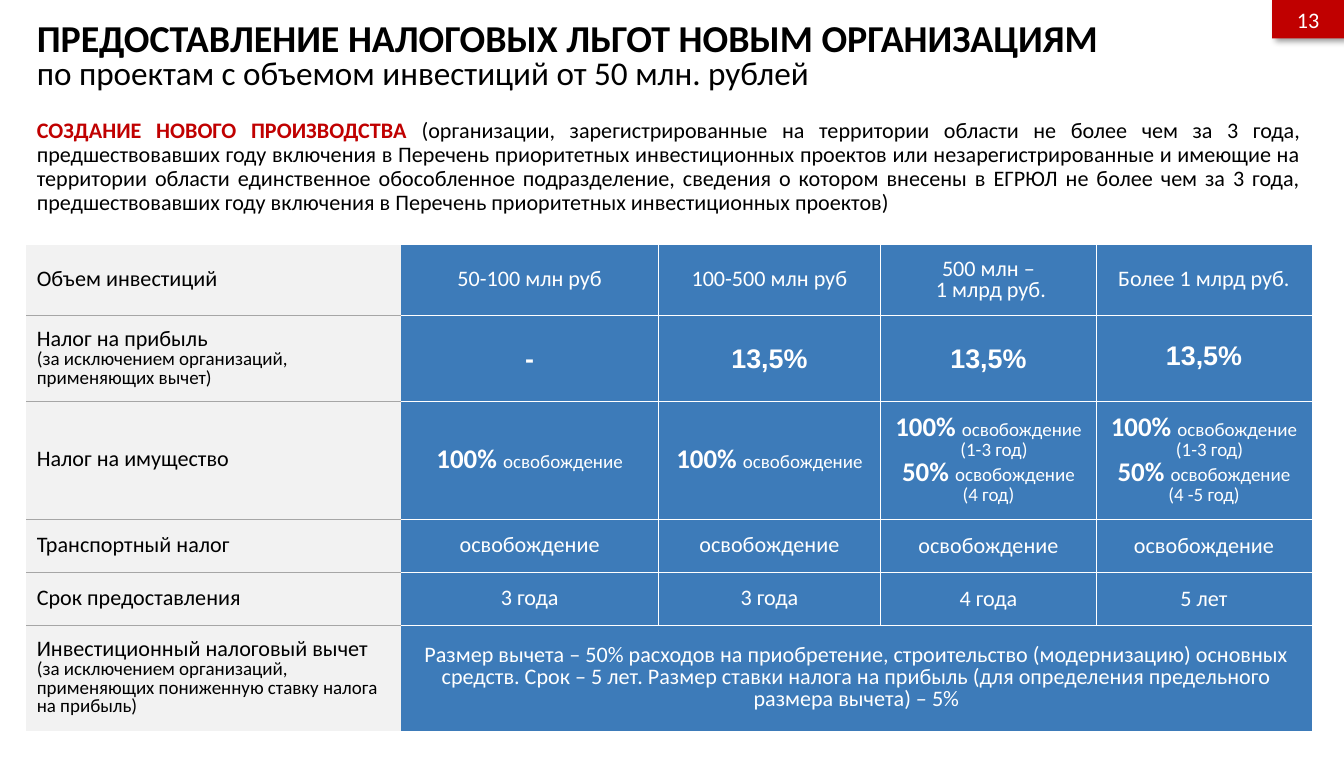
from lxml import etree
from pptx import Presentation
from pptx.dml.color import RGBColor
from pptx.enum.shapes import MSO_SHAPE
from pptx.enum.text import MSO_ANCHOR, PP_ALIGN
from pptx.oxml import parse_xml
from pptx.oxml.ns import nsdecls, qn
from pptx.util import Pt

LEFT, CENTER, JUSTIFY = PP_ALIGN.LEFT, PP_ALIGN.CENTER, PP_ALIGN.JUSTIFY
MIDDLE = MSO_ANCHOR.MIDDLE
RECTANGLE = MSO_SHAPE.RECTANGLE
COLORS = {
    "black": "000000",
    "white": "FFFFFF",
    "red": "C00000",
    "blue": "3D7BB9",
    "label": "F2F2F2",
    "rule": "A6A6A6",
}


def write_text(frame, paragraphs, size=14, font="Calibri", color="black", bold=False,
               align=LEFT, spacing=0.8, margins=(6.8, 6.8)):
    frame.word_wrap = True
    frame.margin_left = frame.margin_right = Pt(margins[0])
    frame.margin_top = frame.margin_bottom = Pt(margins[1])
    for index, runs in enumerate(paragraphs):
        paragraph = frame.add_paragraph() if index else frame.paragraphs[0]
        paragraph.alignment = align
        paragraph.line_spacing = spacing
        for text, changes in runs:
            run = paragraph.add_run()
            run.text = text
            run.font.name = font
            run.font.size = Pt(changes.get("size", size))
            run.font.bold = changes.get("bold", bold)
            run.font.color.rgb = RGBColor.from_string(COLORS[changes.get("color", color)])


def set_border(cell, side, color, width):
    properties = cell._tc.get_or_add_tcPr()
    line = etree.SubElement(properties, qn(f"a:ln{side}"), w=str(Pt(width)))
    if color:
        fill = etree.SubElement(line, qn("a:solidFill"))
        etree.SubElement(fill, qn("a:srgbClr"), val=COLORS[color])
    else:
        etree.SubElement(line, qn("a:noFill"))


presentation = Presentation()
presentation.slide_width = Pt(850.4)
presentation.slide_height = Pt(481.9)
slide = presentation.slides.add_slide(presentation.slide_layouts[6])

left, width = 16.5, 813.6
title = slide.shapes.add_textbox(Pt(left), Pt(11.5), Pt(width), Pt(50.4))
write_text(title.text_frame, [
    [("ПРЕДОСТАВЛЕНИЕ НАЛОГОВЫХ ЛЬГОТ НОВЫМ ОРГАНИЗАЦИЯМ", {"size": 24, "bold": True})],
    [("по проектам с объемом инвестиций от 50 млн. рублей", {})],
], size=21, margins=(6.8, 3.4))

conditions = slide.shapes.add_textbox(Pt(left), Pt(72), Pt(width), Pt(67.7))
write_text(conditions.text_frame, [[
    ("СОЗДАНИЕ НОВОГО ПРОИЗВОДСТВА ", {"color": "red", "bold": True}),
    ("(организации, зарегистрированные на территории области не более чем за 3 года, "
     "предшествовавших году включения в Перечень приоритетных инвестиционных проектов "
     "или незарегистрированные и имеющие на территории области единственное обособленное "
     "подразделение, сведения о котором внесены в ЕГРЮЛ не более чем за 3 года, "
     "предшествовавших году включения в Перечень приоритетных инвестиционных проектов)", {}),
]], align=JUSTIFY, spacing=0.9, margins=(6.8, 3.4))

small = {"size": 12}
big = {"size": 17, "bold": True}
exemption = [("100% ", big), ("освобождение", small)]
half_exemption = [("50% ", big), ("освобождение", small)]
first_years = [("(1-3 год)", small)]

labels = [
    [[("Объем инвестиций", {})]],
    [[("Налог на прибыль", {})], [("(за исключением организаций, применяющих вычет)", small)]],
    [[("Налог на имущество", {})]],
    [[("Транспортный налог", {})]],
    [[("Срок предоставления", {})]],
    [[("Инвестиционный налоговый вычет ", {}),
      ("(за исключением организаций, применяющих пониженную ставку налога на прибыль)", small)]],
]
values = [
    [[[("50-100 млн руб", {})]], [[("100-500 млн руб", {})]],
     [[("500 млн –", {})], [(" 1 млрд руб.", {})]], [[("Более 1 млрд руб.", {})]]],
    [[[(rate, {})]] for rate in ("-", "13,5%", "13,5%", "13,5%")],
    [[exemption], [exemption],
     [exemption, first_years, half_exemption, [("(4 год)", small)]],
     [exemption, first_years, half_exemption, [("(4 -5 год)", small)]]],
    [[[("освобождение", {})]]] * 4,
    [[[(term, {})]] for term in ("3 года", "3 года", "4 года", "5 лет")],
    [[[("Размер вычета – 50% расходов на приобретение, строительство (модернизацию) основных "
        "средств. Срок – 5 лет. Размер ставки налога на прибыль (для определения предельного "
        "размера вычета) – 5%", {})]]],
]
spacings = {1: [1, 1, 1, 0.8], 3: [0.8, 0.8, 1, 1], 4: [0.8, 0.8, 1, 1]}
column_widths = [237.4, 162.6, 140.8, 136.4, 136.4]
row_heights = [44.6, 54.4, 74.4, 33.5, 33.5, 67]

frame = slide.shapes.add_table(len(row_heights), len(column_widths), Pt(left), Pt(155),
                               Pt(sum(column_widths)), Pt(sum(row_heights)))
table = frame.table
table.first_row = table.horz_banding = False
for column, column_width in zip(table.columns, column_widths):
    column.width = Pt(column_width)
for row, row_height in zip(table.rows, row_heights):
    row.height = Pt(row_height)

last_row, last_column = len(row_heights) - 1, len(column_widths) - 1
table.cell(last_row, 1).merge(table.cell(last_row, last_column))

for row, (label, row_values) in enumerate(zip(labels, values)):
    for column, paragraphs in enumerate([label] + row_values):
        cell = table.cell(row, column)
        rule = "white" if column else "rule"
        inner_right = 0 < column < last_column and row < last_row
        set_border(cell, "L", "white" if column > 1 else None, 1)
        set_border(cell, "R", "white" if inner_right else None, 1)
        set_border(cell, "T", rule if row else None, 0.75)
        set_border(cell, "B", rule if row < last_row else None, 0.75)
        cell.fill.solid()
        cell.fill.fore_color.rgb = RGBColor.from_string(COLORS["blue" if column else "label"])
        cell.vertical_anchor = MIDDLE
        cell.margin_left = cell.margin_right = cell.margin_top = cell.margin_bottom = Pt(6.8)
        is_rate = row == 1 and column > 0
        write_text(cell.text_frame, paragraphs,
                   size=17 if is_rate else 14,
                   font="Arial" if is_rate else "Calibri",
                   bold=is_rate,
                   color="white" if column else "black",
                   align=CENTER if column else LEFT,
                   spacing=spacings[row][column - 1] if column and row in spacings else 0.8)
        for paragraph in cell.text_frame.paragraphs:
            if paragraph.text == "(1-3 год)":
                paragraph._p.get_or_add_pPr().set("marL", str(Pt(7)))

page_number = slide.shapes.add_shape(RECTANGLE, Pt(805), Pt(0), Pt(45.4), Pt(24.3))
page_number.fill.solid()
page_number.fill.fore_color.rgb = RGBColor.from_string(COLORS["red"])
page_number.line.fill.background()
page_number._element.spPr.append(parse_xml(
    f'<a:effectLst {nsdecls("a")}><a:outerShdw blurRad="{Pt(4)}" dist="{Pt(3)}" dir="2700000">'
    f'<a:srgbClr val="{COLORS["black"]}"><a:alpha val="40000"/></a:srgbClr>'
    '</a:outerShdw></a:effectLst>'))
page_number.text_frame.vertical_anchor = MIDDLE
write_text(page_number.text_frame, [[("13", {})]], color="white", align=CENTER,
           spacing=1, margins=(7.2, 3.6))

presentation.save("out.pptx")
